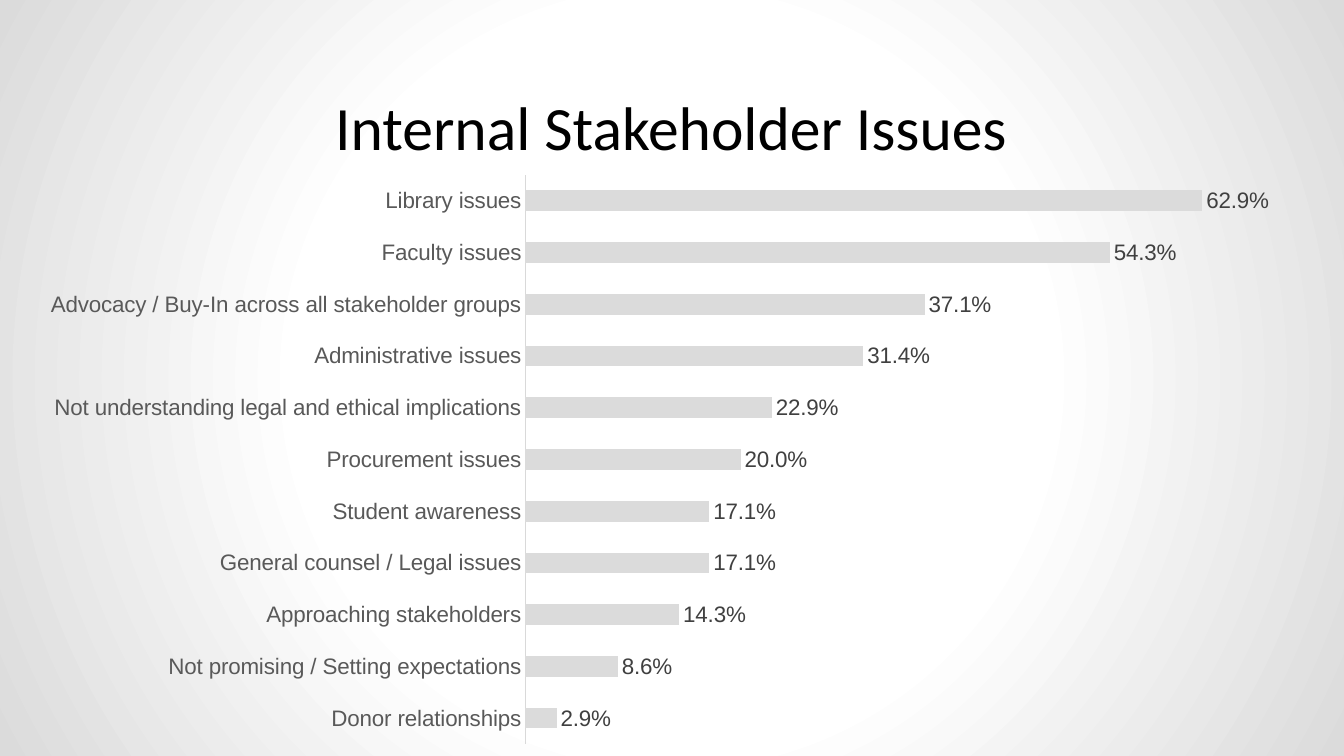
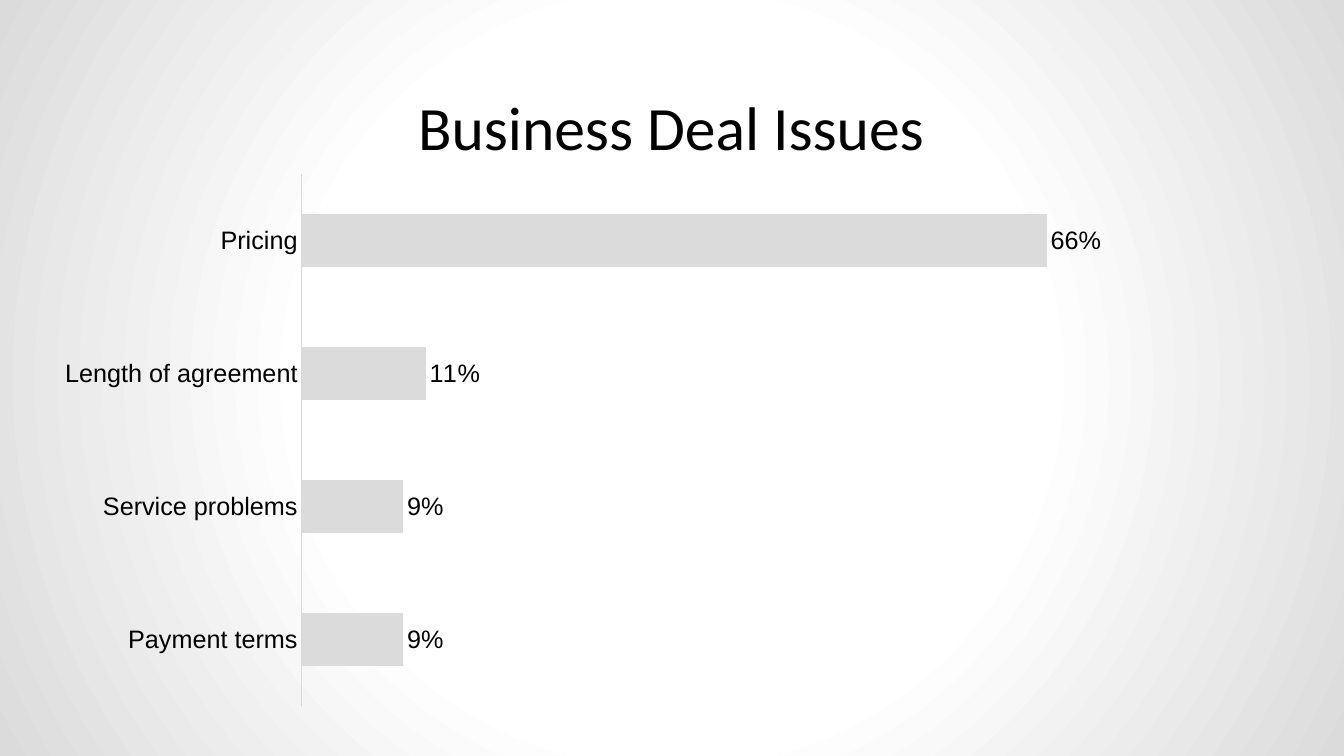
from lxml import etree
from pptx import Presentation
from pptx import util as u
from pptx.chart.data import CategoryChartData
from pptx.dml.color import RGBColor
from pptx.enum import chart as charts, text
from pptx.oxml.ns import qn

BLACK = "000000"
BAR_GREY = "DBDBDB"
AXIS_GREY = "D9D9D9"
AXIS_MAXIMUM = 0.7

SLIDES = [
    {
        "title": "Internal Stakeholder Issues",
        "frame": (0, 4.12, 32.92, 14.94),
        "plot": (13.24, 4.41, 18.99, 14.34),
        "size": 16,
        "format": "0.0%",
        "axis_color": "595959",
        "label_color": "404040",
        "values": {
            "Donor relationships": 0.029,
            "Not promising / Setting expectations": 0.086,
            "Approaching stakeholders": 0.143,
            "General counsel / Legal issues": 0.171,
            "Student awareness": 0.171,
            "Procurement issues": 0.2,
            "Not understanding legal and ethical implications": 0.229,
            "Administrative issues": 0.314,
            "Advocacy / Buy-In across all stakeholder groups": 0.371,
            "Faculty issues": 0.543,
            "Library issues": 0.629,
        },
    },
    {
        "title": "Business Deal Issues",
        "frame": (0.56, 4.12, 27.61, 13.97),
        "plot": (7.6, 4.38, 19.92, 13.41),
        "size": 18,
        "format": "0%",
        "axis_color": BLACK,
        "label_color": BLACK,
        "values": {
            "Payment terms": 0.09,
            "Service problems": 0.09,
            "Length of agreement": 0.11,
            "Pricing": 0.66,
        },
    },
]


def rgb(color):
    return RGBColor.from_string(color)


def style_font(font, name, size, color):
    font.name = name
    font.size = u.Pt(size)
    font.color.rgb = rgb(color)


presentation = Presentation()
presentation.slide_width = u.Cm(33.87)
presentation.slide_height = u.Cm(19.05)

master = presentation.slide_master
master.background.fill.gradient()
gradient = master.element.find(".//" + qn("a:gradFill"))
gradient.clear()
stops = etree.SubElement(gradient, qn("a:gsLst"))
for position, color in ((0, "FFFFFF"), (48, "FFFFFF"), (100, BAR_GREY)):
    stop = etree.SubElement(stops, qn("a:gs"), pos=str(position * 1000))
    etree.SubElement(stop, qn("a:srgbClr"), val=color)
circle = etree.SubElement(gradient, qn("a:path"), path="circle")
etree.SubElement(circle, qn("a:fillToRect"), l="50000", t="50000", r="50000", b="50000")

for content in SLIDES:
    slide = presentation.slides.add_slide(presentation.slide_layouts[6])

    title = slide.shapes.add_textbox(u.Cm(2.66), u.Cm(1.99), u.Cm(28.52), u.Cm(2.13))
    frame = title.text_frame
    frame.word_wrap = True
    frame.margin_left = frame.margin_right = u.Cm(0.25)
    frame.margin_top = frame.margin_bottom = u.Cm(0.25)
    frame.text = content["title"]
    paragraph = frame.paragraphs[0]
    paragraph.alignment = text.PP_ALIGN.CENTER
    style_font(paragraph.runs[0].font, "Calibri", 44, BLACK)

    data = CategoryChartData(number_format=content["format"])
    data.categories = list(content["values"])
    data.add_series("Series 1", list(content["values"].values()))
    chart = slide.shapes.add_chart(
        charts.XL_CHART_TYPE.BAR_CLUSTERED, *map(u.Cm, content["frame"]), data
    ).chart
    chart.has_legend = False
    chart.has_title = False
    style_font(chart.font, "Arial", content["size"], BLACK)

    category_axis = chart.category_axis
    category_axis.has_major_gridlines = False
    category_axis.major_tick_mark = charts.XL_TICK_MARK.NONE
    category_axis.format.line.color.rgb = rgb(AXIS_GREY)
    category_axis.format.line.width = u.Pt(0.75)
    style_font(category_axis.tick_labels.font, "Arial", content["size"], content["axis_color"])

    value_axis = chart.value_axis
    value_axis.minimum_scale = 0
    value_axis.maximum_scale = AXIS_MAXIMUM
    value_axis.has_major_gridlines = False
    value_axis.visible = False

    plot = chart.plots[0]
    plot.gap_width = 150
    plot.overlap = -25
    plot.vary_by_categories = False
    bars = plot.series[0]
    bars.format.fill.solid()
    bars.format.fill.fore_color.rgb = rgb(BAR_GREY)

    labels = bars.data_labels
    labels.show_value = True
    labels.position = charts.XL_LABEL_POSITION.OUTSIDE_END
    labels.number_format = content["format"]
    labels.number_format_is_linked = False
    style_font(labels.font, "Arial", content["size"], content["label_color"])

    plot_area = chart.element.find(".//" + qn("c:plotArea"))
    for automatic_layout in plot_area.findall(qn("c:layout")):
        plot_area.remove(automatic_layout)
    layout = etree.Element(qn("c:layout"))
    plot_area.insert(0, layout)
    manual = etree.SubElement(layout, qn("c:manualLayout"))
    etree.SubElement(manual, qn("c:layoutTarget"), val="inner")
    for mode in ("xMode", "yMode"):
        etree.SubElement(manual, qn("c:" + mode), val="edge")
    left, top, width, height = content["frame"]
    plot_left, plot_top, plot_width, plot_height = content["plot"]
    shares = {
        "x": (plot_left - left) / width,
        "y": (plot_top - top) / height,
        "w": plot_width / width,
        "h": plot_height / height,
    }
    for side, share in shares.items():
        etree.SubElement(manual, qn("c:" + side), val=str(share))

presentation.save("out.pptx")
